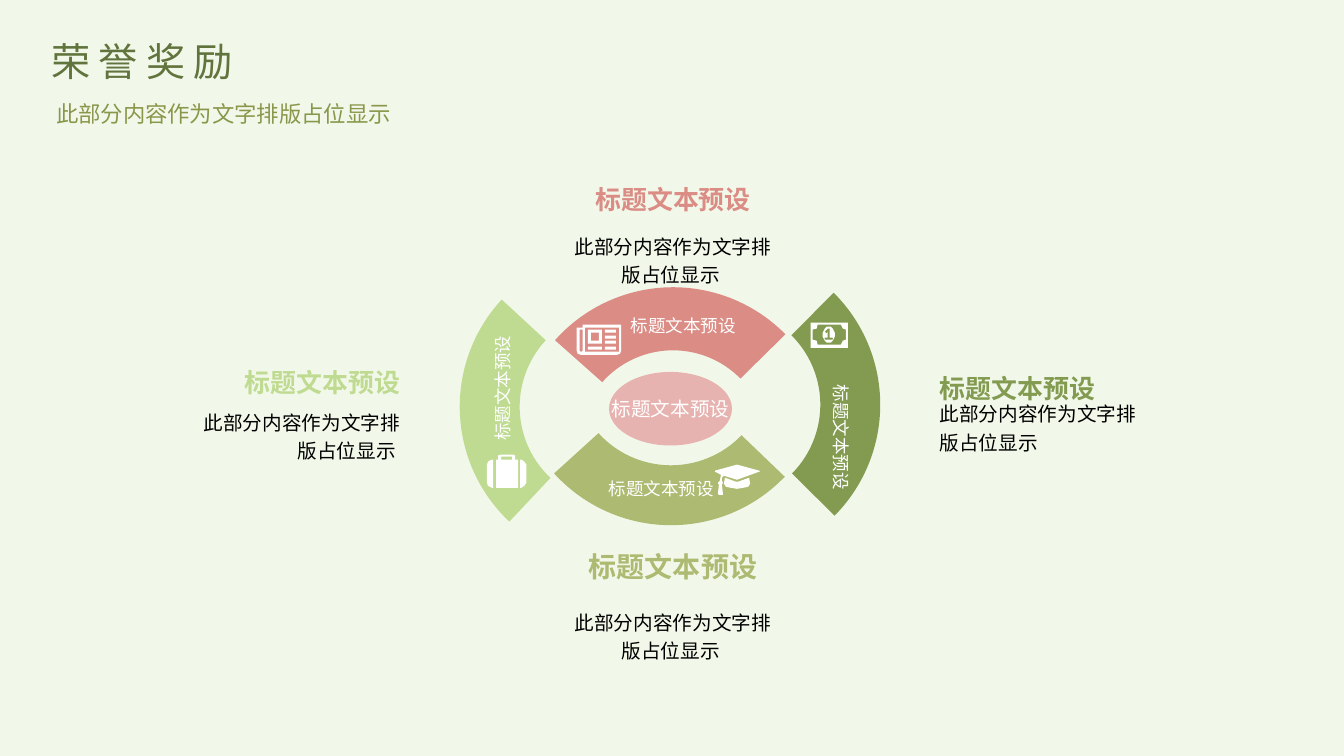
from math import cos, pi, sin

from pptx import Presentation
from pptx.dml.color import RGBColor as RGB
from pptx.enum.shapes import MSO_SHAPE as Kind
from pptx.enum.text import MSO_ANCHOR as Anchor, MSO_AUTO_SIZE as Fit, PP_ALIGN as Align
from pptx.oxml.ns import qn
from pptx.util import Inches, Pt


class Theme:
    font = "Noto Sans CJK SC"
    back, white, black = "F2F8E9", "FFFFFF", "000000"
    title, sub = "62743D", "88974A"
    rose, pink = "DA8C85", "E7B3B0"
    olive, green, lime = "ACBA72", "839B51", "BFDB91"
    head, lead, body, tag, big, foot = 28, 16, 14, 12.5, 18.5, 20


def paint(shape, color):
    shape.shadow.inherit = False
    shape.fill.solid()
    shape.fill.fore_color.rgb = RGB.from_string(color)
    shape.line.fill.background()


def write(shape, text, size, color, align=Align.LEFT, anchor=Anchor.TOP,
          inset=(0.1, 0.05, 0.1, 0.05), wrap=False, gap=1.0, bold=False):
    """Fill the shape with one paragraph; inset is left, top, right, bottom."""
    frame = shape.text_frame
    sides = ("margin_left", "margin_top", "margin_right", "margin_bottom")
    look = dict(zip(sides, map(Inches, inset)), word_wrap=wrap, vertical_anchor=anchor)
    for name, value in look.items():
        setattr(frame, name, value)
    para = frame.paragraphs[0]
    para.alignment, para.line_spacing = align, gap
    run = para.add_run()
    run.text = text
    for name, value in {"name": Theme.font, "size": Pt(size), "bold": bold}.items():
        setattr(run.font, name, value)
    run.font.color.rgb = RGB.from_string(color)
    props = run._r.get_or_add_rPr()
    east = props.makeelement(qn("a:ea"), {"typeface": Theme.font})
    props.find(qn("a:latin")).addnext(east)
    return props


deck = Presentation()
deck.slide_width, deck.slide_height = Inches(13.33), Inches(7.5)
slide = deck.slides.add_slide(deck.slide_layouts[6])
slide.background.fill.solid()
slide.background.fill.fore_color.rgb = RGB.from_string(Theme.back)
shapes = slide.shapes

# Ring of four arcs: left, top, turn, start, end, depth, color
arcs = [
    (5.09, 2.08, 224.8, 107.42, 163.79, 0.19, Theme.olive),
    (5.6, 2.45, 134.8, 108, 161.95, 0.19, Theme.green),
    (4.56, 2.47, 307.3, 111.58, 165.3, 0.19, Theme.lime),
    (5.11, 2.85, 39.6, 109.2, 165.5, 0.2, Theme.rose),
]
for left, top, turn, start, end, depth, color in arcs:
    arc = shapes.add_shape(Kind.BLOCK_ARC, *map(Inches, (left, top, 3.13, 3.13)))
    arc.rotation = turn
    for i, value in enumerate((start, end, depth)):
        arc.adjustments[i] = value
    paint(arc, color)

label = "标题文本预设"
core = shapes.add_shape(Kind.OVAL, *map(Inches, (6.04, 3.69, 1.22, 0.73)))
paint(core, Theme.pink)
write(core, label, Theme.body, Theme.white, Align.CENTER, Anchor.MIDDLE)

# Icons in hundredths of an inch; a four-number outline is a box (left, top, right, bottom)
coin = [(822 + 6 * cos(k * pi / 12), 332 + 8 * sin(k * pi / 12)) for k in range(24)]
news = [
    [(616, 322), (616, 348), (615, 351), (612, 352), (576, 352), (573, 351),
     (572, 348), (572, 325), (578, 325), (578, 322)],
    [(578, 327), (575, 327), (575, 348), (576, 349), (577, 349), (578, 348)],
    (580, 325, 614, 349), (583, 327, 597, 341), (583, 344, 597, 347), (586, 330, 594, 338),
    *[(600, y, 611, y + 3) for y in (327, 333, 338, 344)],
]
cap = [
    [(753, 468), (731, 476), (718, 472), (716.5, 474), (716, 477), (717, 479), (716, 481),
     (717, 490), (717, 491), (713, 491), (712, 490), (713, 481), (712, 479), (714, 477),
     (715, 471), (709, 468), (709, 467), (731, 461), (753, 467), (754, 468)],
    [(744, 480), (742, 483), (737, 484.5), (731, 485), (725, 484.5), (720, 483), (718, 480),
     (719, 474), (730, 478), (732, 478), (743, 474)],
]
cash = [
    (804, 320, 841, 345),
    [(839, 327), (835.5, 325.5), (834, 322), (811, 322), (809.5, 325.5), (806, 327),
     (806, 337), (809.5, 338.5), (811, 342), (834, 342), (835.5, 338.5), (839, 337)],
    coin,
    [(826, 337), (826, 335), (823, 335), (823, 326), (821, 326), (818, 329), (820, 331),
     (821, 329), (821, 335), (818, 335), (818, 337)],
]
case = [
    [(489, 484), (488, 484), (484.5, 482.5), (483, 479), (483, 461), (484.5, 457.5),
     (488, 456), (489, 456)],
    [(514, 484), (492, 484), (492, 456), (494, 456), (494, 452), (497, 451), (509, 451),
     (511, 452), (511, 456), (514, 456)],
    (497, 453, 508, 456),
    [(522, 479), (520.5, 482.5), (517, 484), (516, 484), (516, 456), (517, 456),
     (520.5, 457.5), (522, 461)],
]
for icon in (news, cap, cash, case):
    pen = None
    for line in icon:
        if isinstance(line, tuple):
            l, t, r, b = line
            line = [(l, t), (r, t), (r, b), (l, b)]
        if pen is None:
            pen = shapes.build_freeform(*line[0], scale=Inches(0.01))
        else:
            pen.move_to(*line[0])
        pen.add_line_segments(line[1:], close=True)
    paint(pen.convert_to_shape(), Theme.white)

# Arc labels, each wide enough for one line
for left, top, turn in [(6.16, 3.08, 0), (5.94, 4.69, 0), (7.72, 4.24, 90), (4.31, 3.69, 270)]:
    box = shapes.add_textbox(*map(Inches, (left, top, 1.3, 0.26)))
    box.rotation = turn
    write(box, label, Theme.tag, Theme.white)

# Captions: body box, heading box, color, heading size, align, anchors, insets, text
note = "此部分内容作为文字排版占位显示"
none = (0, 0, 0, 0)
mid, low, high = Anchor.MIDDLE, Anchor.BOTTOM, Anchor.TOP
blocks = [
    ((1.76, 3.98, 2.8, 0.49), (2.36, 3.67, 2.2, 0.28), Theme.lime, Theme.big,
     Align.RIGHT, high, low, (0.1, 0.05, 0.59, 0.05), (0, 0, 0.59, 0), note + " "),
    ((8.73, 3.98, 2.84, 0.49), (8.73, 3.71, 2.44, 0.28), Theme.green, Theme.big,
     Align.LEFT, mid, mid, (0.59, 0.05, 0.24, 0.05), (0.59, 0, 0.24, 0), note),
    ((5.61, 2.28, 2.13, 0.8), (5.87, 1.84, 1.61, 0.28), Theme.rose, Theme.big,
     Align.CENTER, high, mid, none, none, note + " "),
    ((5.61, 6.01, 2.13, 0.59), (5.68, 5.36, 1.99, 0.42), Theme.olive, Theme.foot,
     Align.CENTER, high, low, none, none, note + " "),
]
for area, head, color, size, align, hold, pin, pad, trim, text in blocks:
    box = shapes.add_textbox(*map(Inches, area))
    write(box, text, Theme.body, Theme.black, align, hold, pad, True, 1.2)
    box = shapes.add_textbox(*map(Inches, head))
    write(box, label, size, color, align, pin, trim, bold=True)

title = shapes.add_textbox(*map(Inches, (0.41, 0.32, 2.75, 0.57)))
write(title, "荣誉奖励", Theme.head, Theme.title, wrap=True).set("spc", "600")
lead = shapes.add_textbox(*map(Inches, (0.41, 0.89, 3.57, 0.4)))
write(lead, note, Theme.lead, Theme.sub, Align.RIGHT, gap=1.2)
for box in (title, lead):
    box.text_frame.auto_size = Fit.SHAPE_TO_FIT_TEXT

deck.save("out.pptx")
